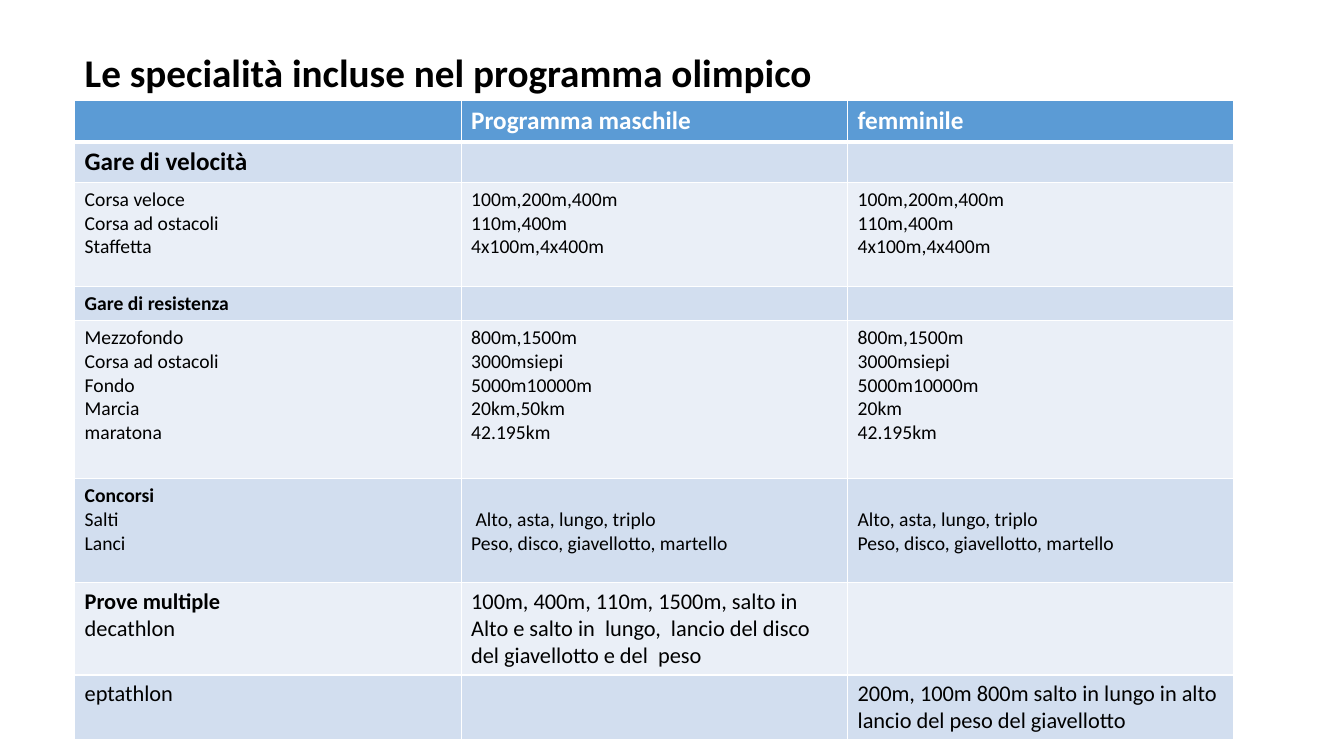
from collections import namedtuple

from lxml.etree import SubElement
from pptx import Presentation
from pptx.dml.color import RGBColor
from pptx.enum.text import MSO_ANCHOR, PP_ALIGN
from pptx.oxml.ns import qn
from pptx.util import Inches, Pt

BLACK = RGBColor(0x00, 0x00, 0x00)
WHITE = RGBColor(0xFF, 0xFF, 0xFF)
BLUE = RGBColor(0x5B, 0x9B, 0xD5)
BAND = RGBColor(0xD2, 0xDE, 0xEF)
PALE = RGBColor(0xEA, 0xEF, 0xF7)
FONT = "Calibri"

LEFT, WIDTH = 0.74, 11.5
PAD = 0.05
DROP = 0.29  # top margin that starts a cell on its second line

# bold: how many leading lines of the first column are bold
Row = namedtuple("Row", "high size bold cells")
ROWS = [
    Row(0.4, 18, 1, ["", "Programma maschile", "femminile"]),
    Row(0.4, 18, 1, ["Gare di velocità", "", ""]),
    Row(1.03, 14, 0, ["Corsa veloce\nCorsa ad ostacoli\nStaffetta",
                      "100m,200m,400m\n110m,400m\n4x100m,4x400m",
                      "100m,200m,400m\n110m,400m\n4x100m,4x400m"]),
    Row(0.34, 14, 1, ["Gare di resistenza", "", ""]),
    Row(1.57, 14, 0, ["Mezzofondo\nCorsa ad ostacoli\nFondo\nMarcia\nmaratona",
                      "800m,1500m\n3000msiepi\n5000m10000m\n20km,50km\n42.195km",
                      "800m,1500m\n3000msiepi\n5000m10000m\n20km\n42.195km"]),
    Row(1.03, 14, 1, ["Concorsi\nSalti\nLanci",
                      " Alto, asta, lungo, triplo\nPeso, disco, giavellotto, martello",
                      "Alto, asta, lungo, triplo\nPeso, disco, giavellotto, martello"]),
    Row(0.9, 16, 1, ["Prove multiple\ndecathlon",
                     "100m, 400m, 110m, 1500m, salto in  Alto e salto in  lungo,  "
                     "lancio del disco  del giavellotto e del  peso", ""]),
    Row(0.62, 16, 0, ["eptathlon", "",
                      "200m, 100m 800m salto in lungo in alto lancio del peso "
                      "del giavellotto"]),
]


def write(frame, text, size, color=BLACK, bold=0):
    """Fill a frame line by line; the first `bold` lines are bold."""
    for i, line in enumerate(text.split("\n")):
        para = frame.paragraphs[0] if i == 0 else frame.add_paragraph()
        para.alignment = PP_ALIGN.LEFT
        if not line:
            SubElement(para._p, qn("a:endParaRPr"), sz=str(size * 100))
            continue
        run = para.add_run()
        run.text = line
        font = run.font
        font.name, font.size, font.bold = FONT, Pt(size), i < bold
        font.color.rgb = color


def edge(cell, top=1, bottom=1):
    """Draw white borders; must come before the cell's fill."""
    props = cell._tc.get_or_add_tcPr()
    for side, wide in (("L", 1), ("R", 1), ("T", top), ("B", bottom)):
        line = SubElement(props, qn("a:ln" + side), w=str(Pt(wide)))
        fill = SubElement(line, qn("a:solidFill"))
        SubElement(fill, qn("a:srgbClr"), val=str(WHITE))


def head(slide, left, top, width, height):
    title = slide.shapes.title
    title.left, title.top = Inches(left), Inches(top)
    title.width, title.height = Inches(width), Inches(height)
    frame = title.text_frame
    frame.word_wrap = True
    frame.vertical_anchor = MSO_ANCHOR.TOP
    write(frame, "Le specialità incluse nel programma olimpico", 28, bold=1)


def events(slide, left, top, width):
    count = len(ROWS[0].cells)
    height = sum(row.high for row in ROWS)
    table = slide.shapes.add_table(
        len(ROWS), count, Inches(left), Inches(top),
        Inches(width), Inches(height)).table
    table.horz_banding = False
    for col in table.columns:
        col.width = Inches(width / count)
    for r, row in enumerate(ROWS):
        table.rows[r].height = Inches(row.high)
        for c, text in enumerate(row.cells):
            cell = table.cell(r, c)
            edge(cell, top=3 if r == 1 else 1, bottom=3 if r == 0 else 1)
            cell.fill.solid()
            cell.fill.fore_color.rgb = BLUE if r == 0 else BAND if r % 2 else PALE
            lower = c > 0 and row.cells[0].startswith("Concorsi")
            cell.margin_top = Inches(DROP if lower else PAD)
            write(cell.text_frame, text, row.size,
                  color=BLACK if r else WHITE,
                  bold=row.bold if r == 0 or c == 0 else 0)


def main():
    deck = Presentation()
    deck.slide_width, deck.slide_height = Inches(13.33), Inches(7.5)
    slide = deck.slides.add_slide(deck.slide_layouts[5])
    head(slide, LEFT, 0.43, WIDTH, 0.57)
    events(slide, LEFT, 1, WIDTH)
    deck.save("out.pptx")


if __name__ == "__main__":
    main()
